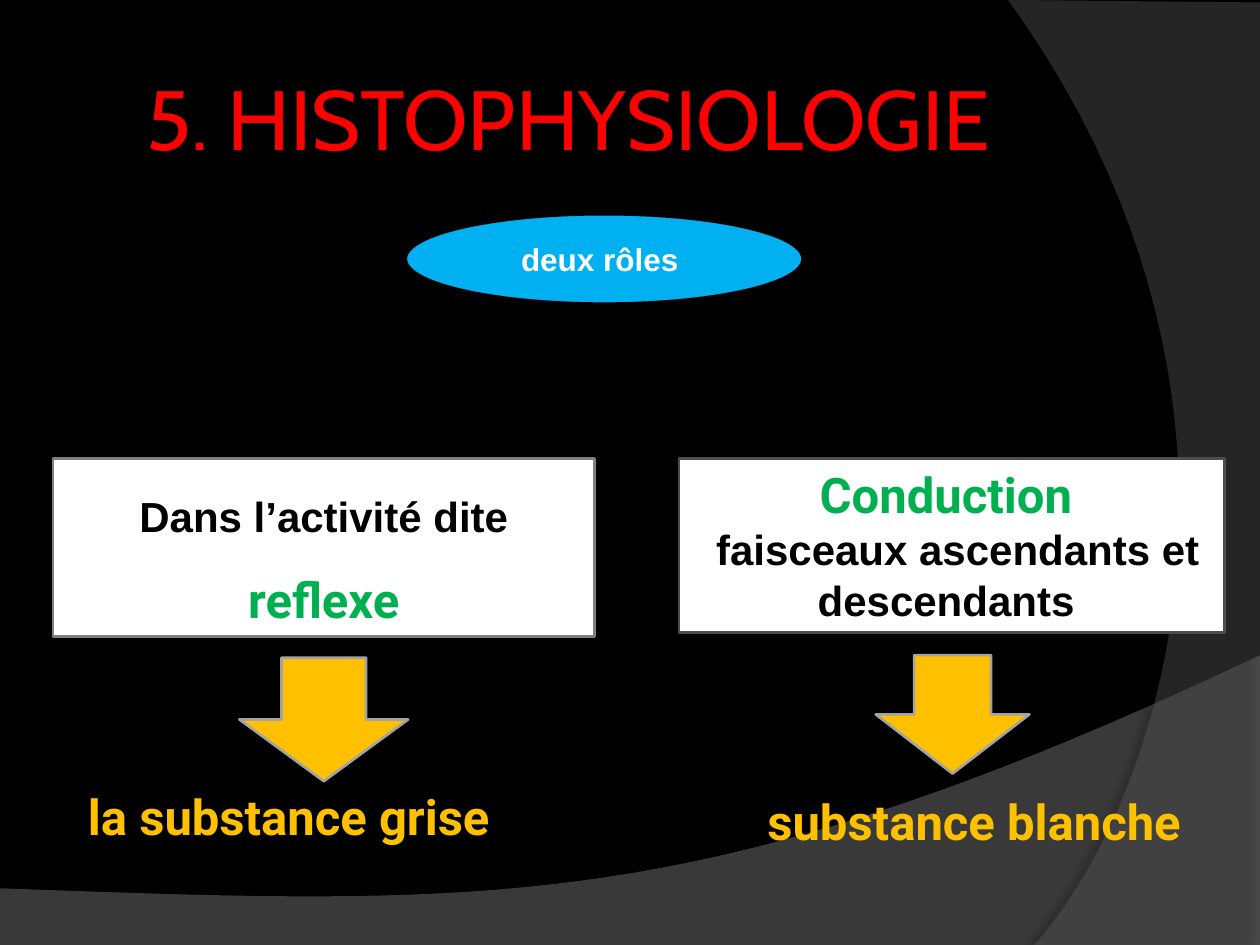
"""Build the slide on the two roles in histophysiology."""
from lxml import etree
from pptx import Presentation
from pptx.dml.color import RGBColor
from pptx.enum.shapes import MSO_SHAPE as Shape
from pptx.enum.text import MSO_ANCHOR as Anchor, PP_ALIGN as Align
from pptx.oxml import parse_xml
from pptx.oxml.ns import nsdecls, qn
from pptx.util import Inches, Pt

THEME = {
    "black": "000000", "white": "FFFFFF", "red": "FF0000", "green": "00B050",
    "blue": "00B0F0", "amber": "FFC000", "arrow_line": "A3A3A3",
    "title": 48, "key": 28, "body": 24, "label": 18,
}


def style_font(font, name, size, color, bold=True):
    font.name, font.size, font.bold = name, Pt(THEME[size]), bold
    font.color.rgb = RGBColor.from_string(THEME[color])


def add_filled(page, kind, place, fill, line):
    shape = page.shapes.add_shape(kind, *map(Inches, place))
    shape.shadow.inherit = False
    shape.fill.solid()
    shape.fill.fore_color.rgb = RGBColor.from_string(fill)
    shape.line.color.rgb = RGBColor.from_string(line)
    shape.line.width = Pt(1.5)
    return shape


deck = Presentation()
deck.slide_width, deck.slide_height = Inches(10), Inches(7.5)
page = deck.slides.add_slide(deck.slide_layouts[5])
page.background.fill.solid()
page.background.fill.fore_color.rgb = RGBColor.from_string(THEME["black"])

STEPS = 40
swooshes = [
    ([(10, 5.2), (5.59, 7.29), (3.91, 7.19), (0, 7.05)],
     [(0, 7.51), (10, 7.51)], "7F7F7F", 45, (35, 4, 3.5, 270)),
    ([(8.21, 7.5), (9.35, 6.19), (10.18, 3), (8, 0)],
     [(10, 0.02), (10, 7.5)], "5E5E5E", 40, (45, 4, 4, 180)),
]
for curve, corners, color, opacity, (strength, blur, distance, angle) in swooshes:
    points = []
    for step in range(STEPS + 1):
        t = step / STEPS
        weights = ((1 - t) ** 3, 3 * t * (1 - t) ** 2, 3 * t ** 2 * (1 - t), t ** 3)
        points.append([sum(w * v for w, v in zip(weights, axis)) for axis in zip(*curve)])
    points = [(Inches(x), Inches(y)) for x, y in points + corners]
    builder = page.shapes.build_freeform(*points[0])
    builder.add_line_segments(points[1:], close=True)
    swoosh = builder.convert_to_shape()
    swoosh.fill.solid()
    swoosh.fill.fore_color.rgb = RGBColor.from_string(color)
    swoosh.line.fill.background()
    tint = swoosh._element.spPr.find(qn("a:solidFill"))[0]
    etree.SubElement(tint, qn("a:alpha"), val=str(opacity * 1000))
    swoosh._element.spPr.append(parse_xml(
        f'<a:effectLst {nsdecls("a")}><a:outerShdw blurRad="{Pt(blur)}" dist="{Pt(distance)}" '
        f'dir="{angle * 60000}" algn="ctr" rotWithShape="0"><a:srgbClr val="{THEME["black"]}">'
        f'<a:alpha val="{strength * 1000}"/></a:srgbClr></a:outerShdw></a:effectLst>'))

title = page.shapes.title
page.shapes._spTree.append(title._element)
title.left, title.top, title.width, title.height = map(Inches, (0.5, 0.3, 8.17, 1.25))
frame = title.text_frame
frame.margin_left = frame.margin_right = frame.margin_top = frame.margin_bottom = Inches(0.05)
frame.vertical_anchor = Anchor.MIDDLE
frame.text = "5. HISTOPHYSIOLOGIE "
frame.paragraphs[0].alignment = Align.CENTER
style_font(frame.paragraphs[0].font, "Cabin", "title", "red", False)

body = ("Arial", "body", "black")
key = ("Roboto", "key", "green")
roles = [
    ((0.42, 3.64, 4.3, 1.41), "808080", 1.5,
     [[("Dans l’activité dite ", body), ("reflexe", key)]]),
    ((5.39, 3.64, 4.33, 1.38), "4D4D4D", 1,
     [[("Conduction ", key)], [(" faisceaux ascendants et descendants ", body)]]),
]
for place, line, spacing, paragraphs in roles:
    box = add_filled(page, Shape.RECTANGLE, place, THEME["white"], line)
    frame = box.text_frame
    frame.word_wrap = True
    frame.vertical_anchor = Anchor.TOP
    for index, spans in enumerate(paragraphs):
        para = frame.add_paragraph() if index else frame.paragraphs[0]
        para.alignment, para.line_spacing = Align.CENTER, spacing
        for text, look in spans:
            span = para.add_run()
            span.text = text
            style_font(span.font, *look)

ellipse = add_filled(page, Shape.OVAL, (3.22, 1.7, 3.15, 0.71), THEME["blue"], THEME["black"])
ellipse.text_frame.text = "deux rôles "
ellipse.text_frame.vertical_anchor = Anchor.MIDDLE
para = ellipse.text_frame.paragraphs[0]
para.alignment = Align.CENTER
style_font(para.font, "Arial", "label", "white")

substances = [
    ("la substance grise", (0.6, 6.19, 4.27, 0.57), Align.LEFT, (1.9, 5.22, 1.34, 0.98)),
    ("substance blanche", (5.64, 6.23, 4.18, 0.57), Align.CENTER, (6.95, 5.2, 1.22, 0.94)),
]
for text, place, alignment, arrow_place in substances:
    box = page.shapes.add_textbox(*map(Inches, place))
    box.text_frame.word_wrap = True
    box.text_frame.text = text
    para = box.text_frame.paragraphs[0]
    para.alignment = alignment
    style_font(para.font, "Roboto", "key", "amber")
    add_filled(page, Shape.DOWN_ARROW, arrow_place, THEME["amber"], THEME["arrow_line"])

deck.save("out.pptx")
